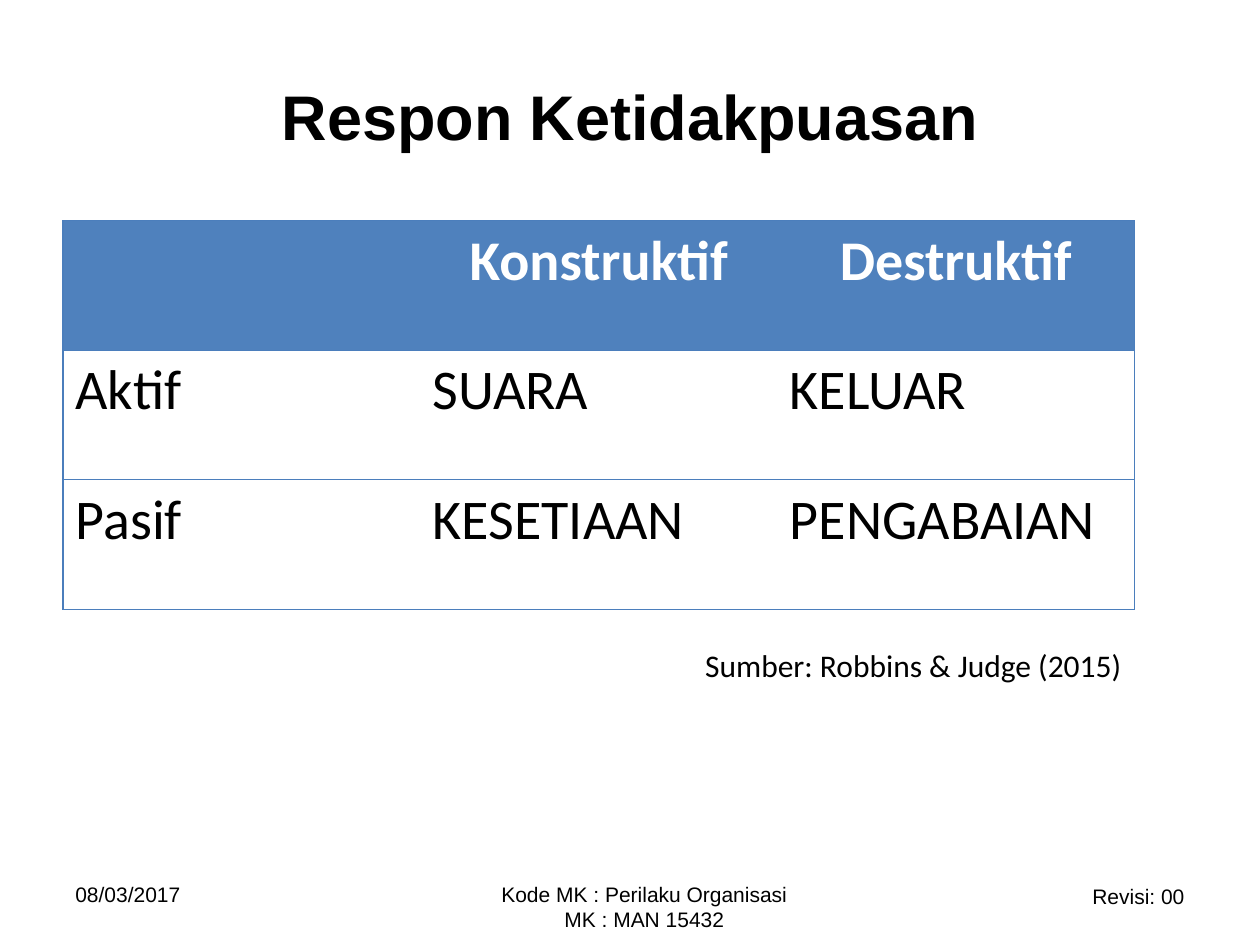
from lxml.etree import SubElement
from pptx import Presentation
from pptx.dml.color import RGBColor
from pptx.enum.text import MSO_ANCHOR, PP_ALIGN
from pptx.oxml.ns import qn
from pptx.util import Cm, Pt

BLACK = RGBColor(0x00, 0x00, 0x00)
WHITE = RGBColor(0xFF, 0xFF, 0xFF)
HEADER_BLUE = RGBColor(0x4F, 0x81, 0xBD)
BORDER_BLUE = RGBColor(0x4B, 0x7E, 0xBC)

TITLE = {"name": "Arial", "size": Pt(36), "bold": True}
FOOTER = {"name": "Arial", "size": Pt(12), "bold": False}
SOURCE = {"name": "Calibri", "size": Pt(18), "bold": False}
HEADING = {"name": "Calibri", "size": Pt(32), "bold": True}
ENTRY = {"name": "Calibri", "size": Pt(32), "bold": False}

RESPONSES = [
    ["", "Konstruktif", "Destruktif"],
    ["Aktif", "SUARA", "KELUAR"],
    ["Pasif", "KESETIAAN", "PENGABAIAN"],
]


def format_para(para, text, style, align, color=BLACK):
    """Fill one paragraph with styled text."""
    para.text = text
    para.alignment = align
    for key, value in style.items():
        setattr(para.font, key, value)
    para.font.color.rgb = color


def add_text(page, area, lines, style, align, anchor=MSO_ANCHOR.TOP):
    """Place a wrapped text box with one paragraph per line."""
    box = page.shapes.add_textbox(*(Cm(length) for length in area))
    frame = box.text_frame
    frame.word_wrap = True
    frame.vertical_anchor = anchor
    for index, line in enumerate(lines):
        para = frame.add_paragraph() if index else frame.paragraphs[0]
        format_para(para, line, style, align)


def set_borders(cell, sides):
    """Draw the named sides of a cell and clear the others."""
    properties = cell._tc.get_or_add_tcPr()
    for side in "LRTB":
        line = SubElement(properties, qn(f"a:ln{side}"), w=str(Pt(0.75)))
        if side in sides:
            fill = SubElement(line, qn("a:solidFill"))
            SubElement(fill, qn("a:srgbClr"), val=str(BORDER_BLUE))
        else:
            SubElement(line, qn("a:noFill"))


def add_response_table(page, area):
    """Place the response grid with equal rows and columns."""
    row_count, column_count = len(RESPONSES), len(RESPONSES[0])
    frame = page.shapes.add_table(row_count, column_count, *(Cm(length) for length in area))
    table = frame.table
    table.horz_banding = False
    for column in table.columns:
        column.width = Cm(area[2] / column_count)
    for row in table.rows:
        row.height = Cm(area[3] / row_count)
    for row_index, texts in enumerate(RESPONSES):
        heading = row_index == 0
        for column_index, text in enumerate(texts):
            cell = table.cell(row_index, column_index)
            left = "L" if column_index == 0 else ""
            right = "R" if column_index == column_count - 1 else ""
            set_borders(cell, "TB" + left + right)
            if heading:
                cell.fill.solid()
                cell.fill.fore_color.rgb = HEADER_BLUE
            else:
                cell.fill.background()
            format_para(
                cell.text_frame.paragraphs[0],
                text,
                HEADING if heading else ENTRY,
                PP_ALIGN.CENTER if heading else PP_ALIGN.LEFT,
                WHITE if heading else BLACK,
            )


def add_footer(page, left, top, width, height):
    """Place the date, course code and revision along the bottom."""
    side = 5.93
    course = ["Kode MK : Perilaku Organisasi", "MK : MAN 15432"]
    add_text(page, (left, top, side, height), ["08/03/2017"], FOOTER, PP_ALIGN.LEFT)
    add_text(page, (left + 7.42, top, 8.6, height), course, FOOTER, PP_ALIGN.CENTER)
    add_text(page, (left + width - side, top + 0.03, side, 0.77), ["Revisi: 00"], FOOTER, PP_ALIGN.RIGHT)


def main():
    """Build and save the slide."""
    deck = Presentation()
    deck.slide_width, deck.slide_height = Cm(25.4), Cm(19.05)
    page = deck.slides.add_slide(deck.slide_layouts[6])
    add_text(page, (1.27, 0.74, 22.86, 3.18), ["Respon Ketidakpuasan"], TITLE, PP_ALIGN.CENTER, MSO_ANCHOR.MIDDLE)
    add_response_table(page, (1.27, 4.45, 21.6, 7.83))
    add_text(page, (11.86, 12.9, 11, 1.02), ["Sumber: Robbins & Judge (2015)"], SOURCE, PP_ALIGN.RIGHT)
    add_footer(page, 1.27, 17.65, 22.86, 1.02)
    deck.save("out.pptx")


if __name__ == "__main__":
    main()
